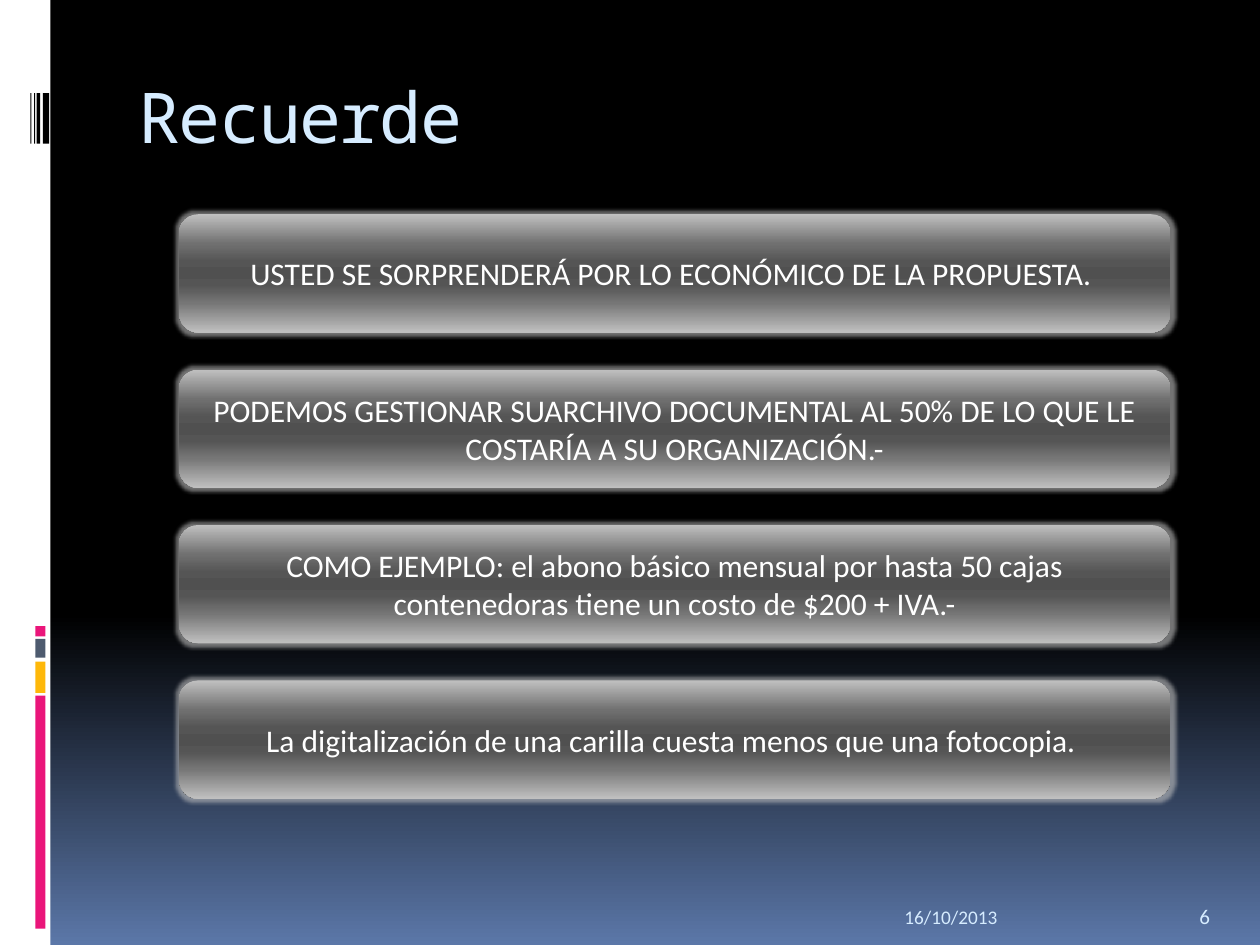
from lxml.etree import SubElement
from pptx import Presentation
from pptx.dml.color import RGBColor
from pptx.enum.shapes import MSO_SHAPE as Shape
from pptx.enum.text import MSO_ANCHOR as Anchor, PP_ALIGN as Align
from pptx.oxml.ns import qn
from pptx.util import Inches, Pt

WHITE = RGBColor(0xFF, 0xFF, 0xFF)
BLACK = RGBColor(0x00, 0x00, 0x00)
PINK = RGBColor(0xEA, 0x15, 0x7A)
AMBER = RGBColor(0xFE, 0xB8, 0x0A)
SLATE = RGBColor(0x4E, 0x5B, 0x6F)
PALE_BLUE = RGBColor(0xD6, 0xEC, 0xFF)
DUSK_BLUE = RGBColor(0x5B, 0x77, 0xA8)
SILVER = RGBColor(0xC0, 0xC0, 0xC0)
GRAYS = [RGBColor(v, v, v) for v in (0x70, 0x55, 0x50, 0x55, 0x76)]

NIGHT_SKY = [(0, BLACK), (65, BLACK), (100, DUSK_BLUE)]
METAL = list(zip((0, 25, 40, 50, 60, 75, 100), [SILVER, *GRAYS, SILVER]))

# Side decoration: left, top, width, height, colour
SIDE_BARS = [
    (0, 0, 0.4, 7.5, WHITE),
    (0.28, 5.52, 0.08, 1.85, PINK),
    (0.28, 5.25, 0.08, 0.25, AMBER),
    (0.28, 5.07, 0.08, 0.15, SLATE),
    (0.28, 4.97, 0.08, 0.08, PINK),
] + [(left, 0.74, width, 0.4, BLACK)
     for left, width in ((0.34, 0.05), (0.29, 0.03), (0.27, 0.01), (0.24, 0.01))]

MESSAGES = [
    "USTED SE SORPRENDERÁ POR LO ECONÓMICO DE LA PROPUESTA. ",
    "PODEMOS GESTIONAR SUARCHIVO DOCUMENTAL AL 50% DE LO QUE LE "
    "COSTARÍA A SU ORGANIZACIÓN.-",
    "COMO EJEMPLO: el abono básico mensual por hasta 50 cajas "
    "contenedoras tiene un costo de $200 + IVA.-",
    "La digitalización de una carilla cuesta menos que una fotocopia. ",
]
FIRST_TOP, LAST_TOP = 1.7, 5.4


def set_gradient(fill, owner, stops):
    """Fill from top to bottom with (percent, colour) stops."""
    fill.gradient()
    fill.gradient_angle = 270
    stop_list = next(owner.iter(qn("a:gsLst")))
    for old_stop in list(stop_list):
        stop_list.remove(old_stop)
    for percent, color in stops:
        stop = SubElement(stop_list, qn("a:gs"), pos=str(percent * 1000))
        SubElement(stop, qn("a:srgbClr"), val=str(color))


def add_glow(shape, color, radius, opacity):
    effects = shape._element.spPr.find(qn("a:effectLst"))
    glow = SubElement(effects, qn("a:glow"), rad=str(radius))
    tint = SubElement(glow, qn("a:srgbClr"), val=str(color))
    SubElement(tint, qn("a:alpha"), val=str(opacity * 1000))


def write_text(shape, text, size, color, anchor, align=Align.LEFT, font="Calibri"):
    frame = shape.text_frame
    frame.word_wrap = True
    frame.vertical_anchor = anchor
    frame.text = text
    paragraph = frame.paragraphs[0]
    paragraph.alignment = align
    run = paragraph.runs[0]
    run.font.size = Pt(size)
    run.font.name = font
    run.font.color.rgb = color
    return run


def add_plain_shape(slide, kind, left, top, width, height):
    shape = slide.shapes.add_shape(
        kind, Inches(left), Inches(top), Inches(width), Inches(height))
    shape.shadow.inherit = False
    shape.line.fill.background()
    return shape


def add_side_bar(slide, left, top, width, height, color):
    bar = add_plain_shape(slide, Shape.RECTANGLE, left, top, width, height)
    bar.fill.solid()
    bar.fill.fore_color.rgb = color


def add_title(slide, text):
    title = slide.shapes.title
    title.left, title.top = Inches(1), Inches(0.56)
    title.width, title.height = Inches(8.5), Inches(1)
    title.text_frame.margin_top = Inches(0.02)
    run = write_text(title, text, 40, PALE_BLUE, Anchor.TOP, font="Noto Sans Mono")
    run.font._element.set("spc", "-100")


def add_footer(slide, left, width, text, size):
    footer = slide.shapes.add_textbox(
        Inches(left), Inches(7.02), Inches(width), Inches(0.4))
    write_text(footer, text, size, PALE_BLUE, Anchor.BOTTOM)


def add_message(slide, top, text):
    panel = add_plain_shape(slide, Shape.ROUNDED_RECTANGLE, 1.42, top, 7.87, 0.94)
    set_gradient(panel.fill, panel._element, METAL)
    add_glow(panel, SILVER, Pt(5), 60)
    write_text(panel, text, 18, WHITE, Anchor.MIDDLE, Align.CENTER)


def main():
    prs = Presentation()
    prs.slide_width, prs.slide_height = Inches(10), Inches(7.5)
    slide = prs.slides.add_slide(prs.slide_layouts[5])

    # Background and side decoration
    set_gradient(slide.background.fill, slide._element, NIGHT_SKY)
    for bar in SIDE_BARS:
        add_side_bar(slide, *bar)

    # Title, date and page number
    add_title(slide, "Recuerde")
    add_footer(slide, 7.08, 2.33, "16/10/2013", 11)
    add_footer(slide, 9.42, 0.5, "6", 12)

    # Evenly spaced message panels
    pitch = (LAST_TOP - FIRST_TOP) / (len(MESSAGES) - 1)
    for row, message in enumerate(MESSAGES):
        add_message(slide, FIRST_TOP + row * pitch, message)

    prs.save("out.pptx")


if __name__ == "__main__":
    main()
